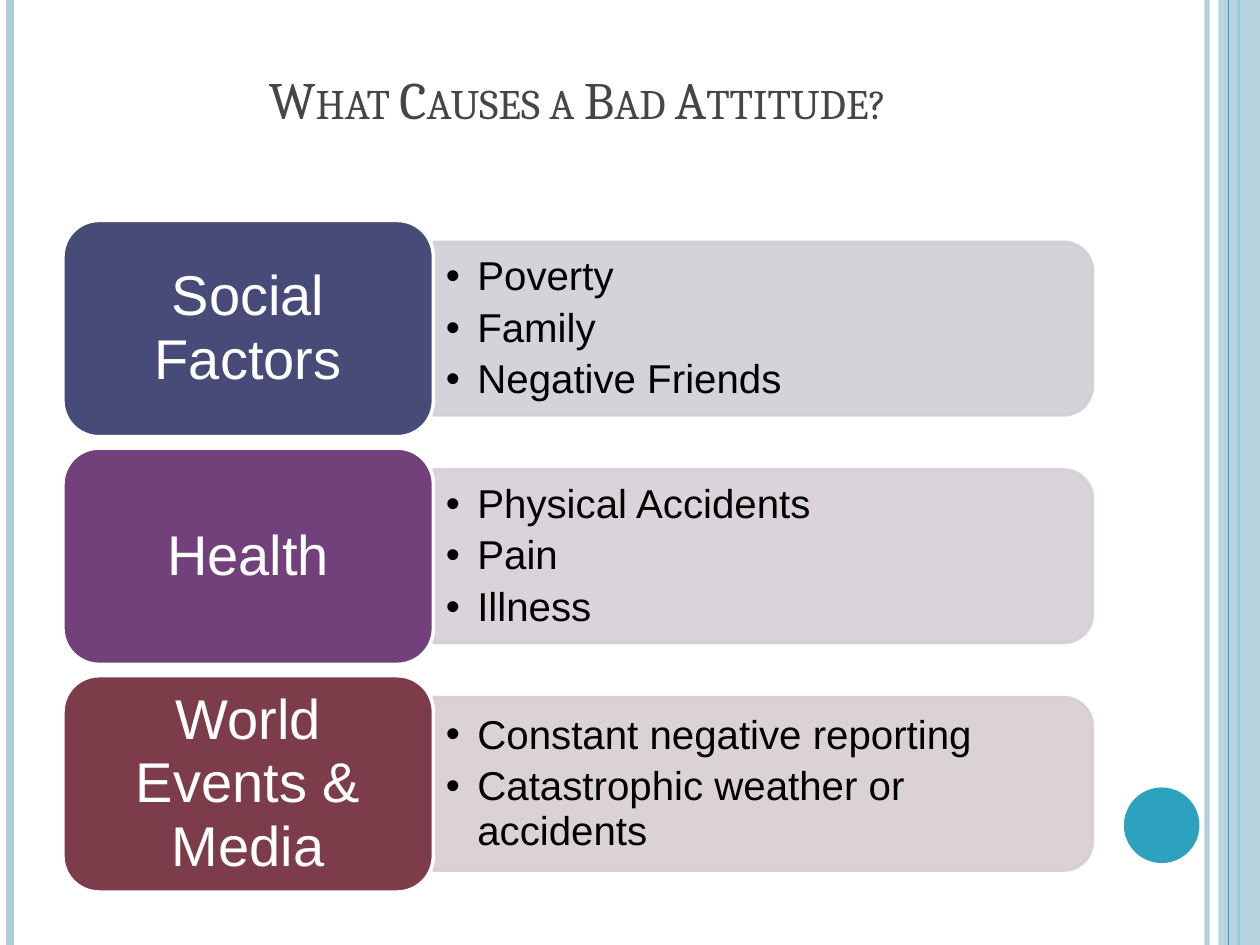
from dataclasses import dataclass

from lxml import etree
from pptx import Presentation
from pptx.dml.color import RGBColor
from pptx.enum.shapes import MSO_CONNECTOR, MSO_SHAPE
from pptx.enum.text import MSO_ANCHOR, PP_ALIGN
from pptx.oxml.ns import qn
from pptx.util import Inches, Pt

STRAIGHT = MSO_CONNECTOR.STRAIGHT
RECTANGLE, OVAL = MSO_SHAPE.RECTANGLE, MSO_SHAPE.OVAL
CARD, PANEL = MSO_SHAPE.ROUNDED_RECTANGLE, MSO_SHAPE.ROUND_2_SAME_RECTANGLE
MIDDLE, BOTTOM = MSO_ANCHOR.MIDDLE, MSO_ANCHOR.BOTTOM
CENTER, LEFT = PP_ALIGN.CENTER, PP_ALIGN.LEFT


@dataclass(frozen=True)
class Theme:
    heading_font: str = "Cambria"
    body_font: str = "Arial"
    title_size: int = 30
    label_size: int = 32
    bullet_size: int = 23
    line_spacing: float = 0.94
    title: str = "464646"
    label: str = "FFFFFF"
    bullet: str = "000000"
    pale: str = "ADCEDC"
    accent: str = "2DA2BF"


THEME = Theme()

# Label, bullets, card colour, panel colour
CAUSES = [
    ("Social Factors", ["Poverty", "Family", "Negative Friends"], "474B78", "CFD0D6"),
    ("Health", ["Physical Accidents", "Pain", "Illness"], "72417B", "D6CFD7"),
    ("World Events & Media",
     ["Constant negative reporting", "Catastrophic weather or accidents"],
     "7D3C4A", "D7CED0"),
]


def set_opacity(shape, percent):
    """Apply one opacity to the fill and line colours of a shape."""
    for color in list(shape.element.spPr.iter(qn("a:srgbClr"))):
        etree.SubElement(color, qn("a:alpha"), val=str(percent * 1000))


def add_block(page, kind, box, fill, line=None, opacity=100):
    shape = page.shapes.add_shape(kind, *map(Inches, box))
    shape.shadow.inherit = False
    shape.fill.solid()
    shape.fill.fore_color.rgb = RGBColor.from_string(fill)
    if line:
        shape.line.color.rgb = RGBColor.from_string(line)
        shape.line.width = Pt(2)
    else:
        shape.line.fill.background()
    if opacity < 100:
        set_opacity(shape, opacity)
    return shape


def add_rule(page, x, height, color, width, opacity=100):
    rule = page.shapes.add_connector(
        STRAIGHT, Inches(x), Inches(0), Inches(x), Inches(height))
    rule.line.color.rgb = RGBColor.from_string(color)
    rule.line.width = Pt(width)
    etree.SubElement(rule.element.spPr, qn("a:effectLst"))
    if opacity < 100:
        set_opacity(rule, opacity)


def set_frame(frame, anchor, inset_x, inset_y):
    frame.word_wrap = True
    frame.vertical_anchor = anchor
    frame.margin_left = frame.margin_right = Inches(inset_x)
    frame.margin_top = frame.margin_bottom = Inches(inset_y)


def style_para(para, font, size, color, align):
    para.alignment = align
    for span in para.runs:
        span.font.name = font
        span.font.size = Pt(size)
        span.font.color.rgb = RGBColor.from_string(color)


def add_bullet(para):
    props = para._p.get_or_add_pPr()
    props.set("marL", str(Inches(0.25)))
    props.set("indent", str(Inches(-0.25)))
    etree.SubElement(props, qn("a:buFont"), typeface=THEME.body_font)
    etree.SubElement(props, qn("a:buChar"), char="•")


def draw_frame(page, width, height):
    """Vertical rules, side band and dot."""
    add_rule(page, width - 0.42, height, THEME.pale, 3, 93)
    add_rule(page, 0.08, height, THEME.pale, 4.5)
    add_rule(page, width - 0.17, height, THEME.accent, 1.5)
    add_block(page, RECTANGLE, (width - 0.33, 0, 0.33, height), THEME.pale, opacity=87)
    add_rule(page, width - 0.25, height, THEME.accent, 0.75)
    add_block(page, OVAL, (width - 1.08, height - 1.25, 0.6, 0.6), THEME.accent)


def draw_title(page, box, text):
    title = page.shapes.title
    title.left, title.top, title.width, title.height = map(Inches, box)
    title.text_frame.text = text
    set_frame(title.text_frame, BOTTOM, 0.1, 0.05)
    para = title.text_frame.paragraphs[0]
    style_para(para, THEME.heading_font, THEME.title_size, THEME.title, CENTER)
    para.runs[0].font._element.set("cap", "small")


def draw_cause(page, box, label, bullets, card_color, panel_color):
    """A coloured label card with a paler bullet panel on its right."""
    left, top, width, height = box
    card_width = 2.94
    panel_left, panel_width = left + card_width, width - card_width
    panel_height = 1.37

    # Panel, turned so that its rounded corners face right
    panel = add_block(
        page, PANEL,
        (panel_left + (panel_width - panel_height) / 2,
         top + (height - panel_width) / 2, panel_height, panel_width),
        panel_color, panel_color, 90)
    panel.rotation = 90

    # Bullets
    text_height = 1.24
    notes = page.shapes.add_textbox(*map(Inches, (
        panel_left, top + (height - text_height) / 2, panel_width - 0.07, text_height)))
    frame = notes.text_frame
    set_frame(frame, MIDDLE, 0.1, 0.05)
    frame.text = "\n".join(bullets)
    for para in frame.paragraphs:
        style_para(para, THEME.body_font, THEME.bullet_size, THEME.bullet, LEFT)
        para.line_spacing = THEME.line_spacing
        para.space_after = Pt(3.5)
        add_bullet(para)

    # Label card
    card = add_block(page, CARD, (left, top, card_width, height), card_color, THEME.label)
    set_frame(card.text_frame, MIDDLE, 0.13, 0.07)
    card.text_frame.text = label
    para = card.text_frame.paragraphs[0]
    style_para(para, THEME.body_font, THEME.label_size, THEME.label, CENTER)
    para.line_spacing = THEME.line_spacing


def draw_causes(page, box, gap):
    left, top, width, height = box
    row_height = (height - gap * (len(CAUSES) - 1)) / len(CAUSES)
    for index, cause in enumerate(CAUSES):
        row_top = top + index * (row_height + gap)
        draw_cause(page, (left, row_top, width, row_height), *cause)


def main():
    width, height = 10, 7.5
    deck = Presentation()
    deck.slide_width, deck.slide_height = Inches(width), Inches(height)
    page = deck.slides.add_slide(deck.slide_layouts[5])
    draw_frame(page, width, height)
    draw_title(page, (0.5, 0.3, 8.17, 0.78), "What Causes a Bad Attitude?")
    draw_causes(page, (0.5, 1.75, 8.17, 5.33), 0.09)
    deck.save("out.pptx")


if __name__ == "__main__":
    main()
